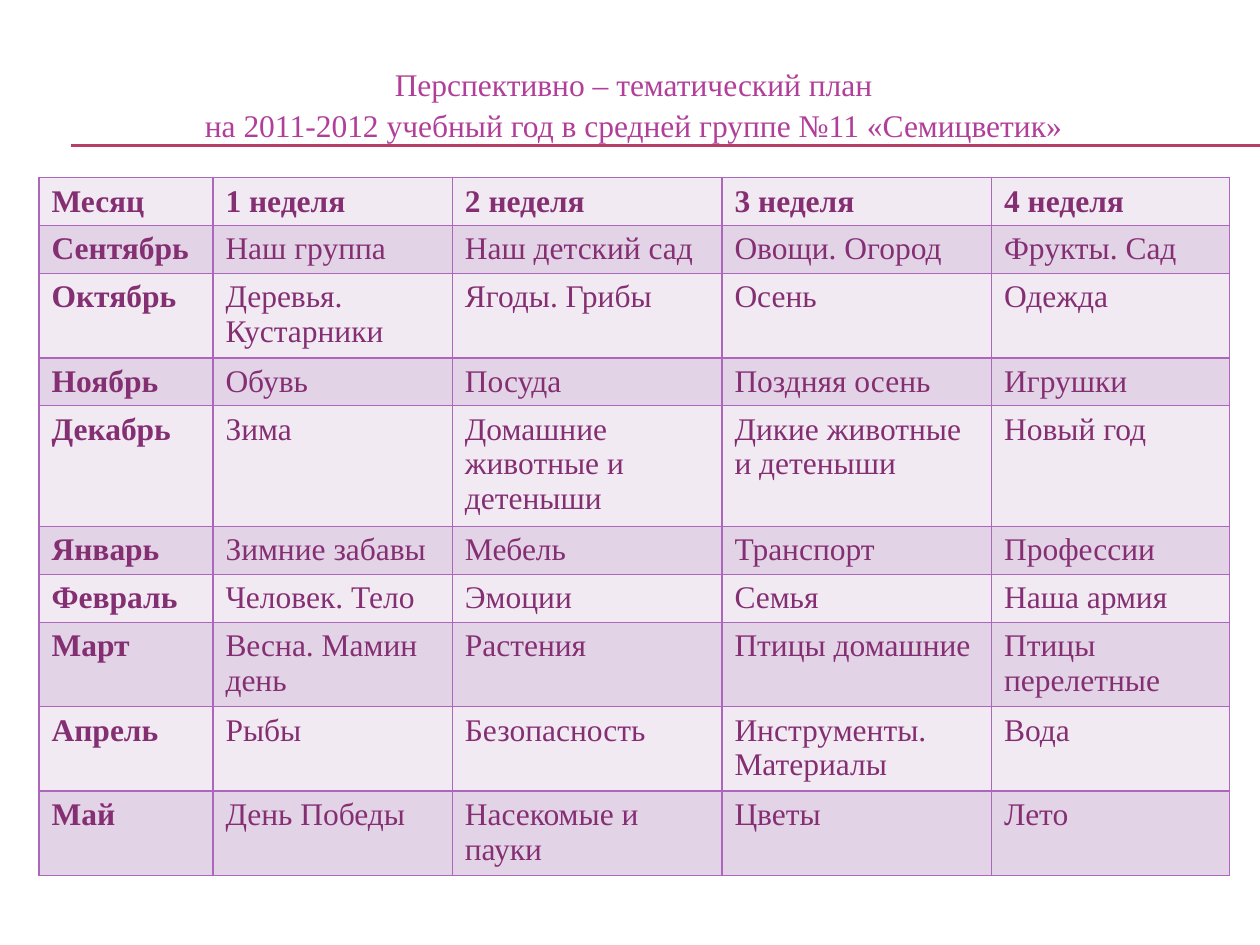
"""Build the yearly theme plan slide: a title, a double rule and a month by week table."""
from lxml.etree import SubElement as Sub
from pptx import Presentation as Deck
from pptx.dml.color import RGBColor as Rgb
from pptx.enum.text import MSO_ANCHOR as Anchor, MSO_AUTO_SIZE as Fit, PP_ALIGN as Align
from pptx.oxml.ns import qn
from pptx.util import Inches, Pt

THEME = {
    "font": "Times New Roman", "size": Pt(18), "thin": Pt(0.75), "edge": Pt(1),
    "title": "B13F9A", "text": "852F73", "rule": "B83D68", "grid": "AC66BB",
    "bands": ("F1EAF3", "E3D3E7"),
}
TITLE = "Перспективно – тематический план\vна 2011-2012 учебный год в средней группе №11 «Семицветик»"
PLAN = [
    (1, "Месяц", "1 неделя", "2 неделя", "3 неделя", "4 неделя"),
    (1, "Сентябрь", "Наш группа", "Наш детский сад", "Овощи. Огород", "Фрукты. Сад"),
    (2, "Октябрь", "Деревья. Кустарники", "Ягоды. Грибы", "Осень", "Одежда"),
    (1, "Ноябрь", "Обувь", "Посуда", "Поздняя осень", "Игрушки"),
    (3, "Декабрь", "Зима", "Домашние животные и детеныши", "Дикие животные и детеныши", "Новый год"),
    (1, "Январь", "Зимние забавы", "Мебель", "Транспорт", "Профессии"),
    (1, "Февраль", "Человек. Тело", "Эмоции", "Семья", "Наша армия"),
    (2, "Март", "Весна. Мамин день", "Растения", "Птицы домашние", "Птицы перелетные"),
    (2, "Апрель", "Рыбы", "Безопасность", "Инструменты. Материалы", "Вода"),
    (2, "Май", "День Победы", "Насекомые и пауки", "Цветы", "Лето"),
]
WIDTHS = (1.38, 1.9, 2.14, 2.14, 1.89)
PAD, LINE = 0.09, 0.29


def style(item, **form):
    for name, value in form.items():
        setattr(item, name, value)


def ink(font, color, bold):
    style(font, name=THEME["font"], size=THEME["size"], bold=bold)
    font.color.rgb = Rgb.from_string(color)


deck = Deck()
style(deck, slide_width=Inches(10), slide_height=Inches(7.5))
wide, high = deck.slide_width, deck.slide_height
slide = deck.slides.add_slide(deck.slide_layouts[5])

for y in (1.15, 1.16):
    rule = slide.shapes.add_connector(1, int(wide * 0.056), Inches(y), wide, Inches(y))
    rule.line.color.rgb = Rgb.from_string(THEME["rule"])
    rule.line.width = THEME["thin"]
    Sub(rule.element.spPr, qn("a:effectLst"))

head = slide.shapes.title
style(head, left=int(wide * 0.023), top=int(high * 0.03), width=int(wide * 0.96), height=Inches(1.18))
head.text_frame.text = TITLE
style(head.text_frame, auto_size=Fit.NONE, word_wrap=True, vertical_anchor=Anchor.MIDDLE)
para = head.text_frame.paragraphs[0]
style(para, alignment=Align.CENTER, line_spacing=1.08)
for run in para.runs:
    ink(run.font, THEME["title"], False)

tall = sum(PAD + LINE * row[0] for row in PLAN)
frame = slide.shapes.add_table(len(PLAN), len(WIDTHS), Inches(0.31), Inches(1.41),
                               Inches(sum(WIDTHS)), Inches(tall))
table = frame.table
for col, width in zip(table.columns, WIDTHS):
    col.width = Inches(width)

for r, (lines, *words) in enumerate(PLAN):
    table.rows[r].height = Inches(PAD + LINE * lines)
    for c, word in enumerate(words):
        cell = table.cell(r, c)
        cell.text = word
        ink(cell.text_frame.paragraphs[0].runs[0].font, THEME["text"], r == 0 or c == 0)
        props = cell._tc.get_or_add_tcPr()
        for side in ("lnL", "lnR", "lnT", "lnB"):
            edge = Sub(props, qn("a:" + side), w=str(THEME["edge"]))
            Sub(Sub(edge, qn("a:solidFill")), qn("a:srgbClr"), val=THEME["grid"])
        cell.fill.solid()
        cell.fill.fore_color.rgb = Rgb.from_string(THEME["bands"][r % 2])

deck.save("out.pptx")
